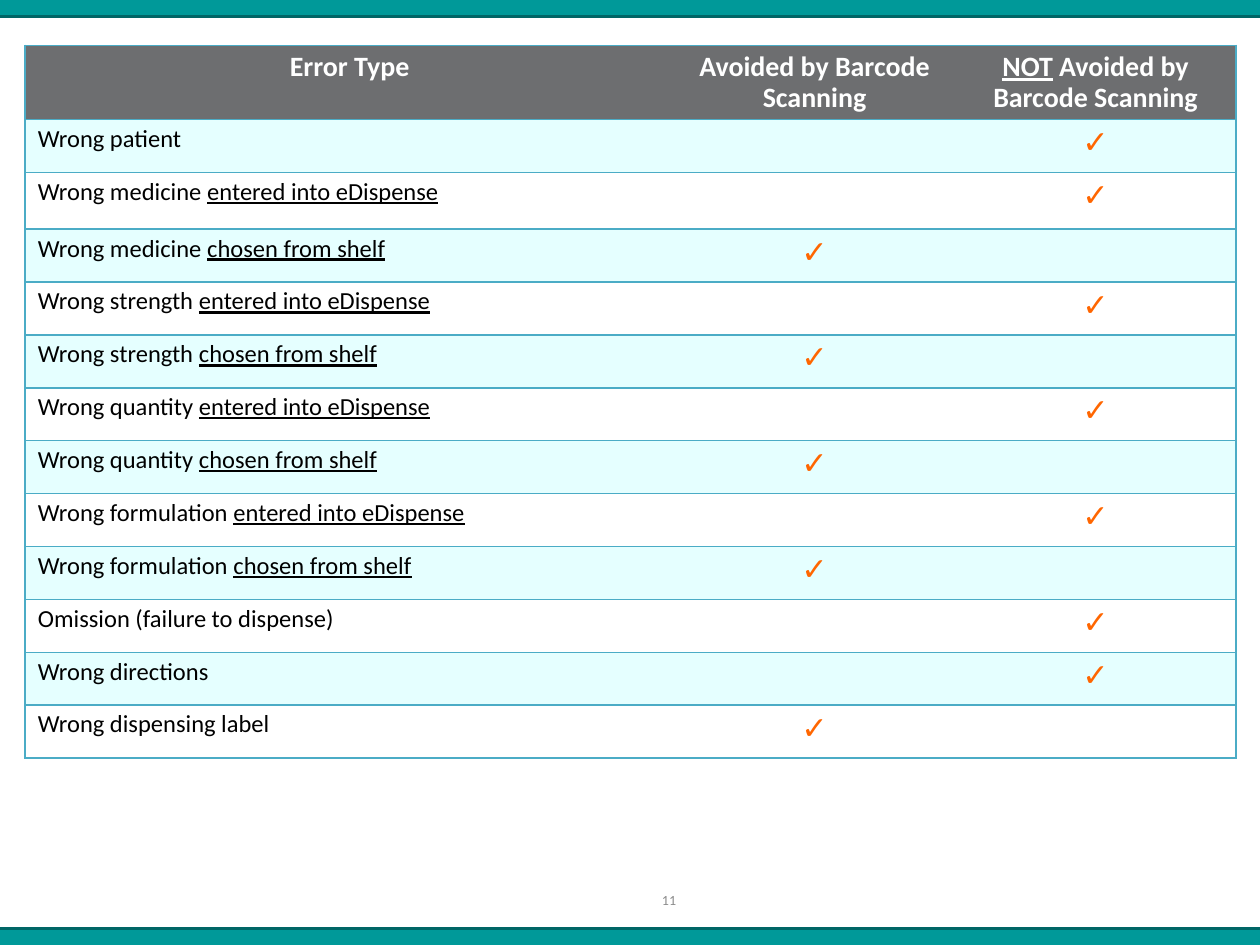
from lxml.etree import SubElement as Sub
from pptx import Presentation as Deck
from pptx.dml.color import RGBColor as RGB
from pptx.enum.shapes import MSO_CONNECTOR as Conn, MSO_SHAPE as Shape
from pptx.enum.text import MSO_ANCHOR as Anchor, PP_ALIGN as Align
from pptx.oxml.ns import qn
from pptx.util import Inches, Pt

TEAL = RGB(0x00, 0x99, 0x99)
DARK = RGB(0x00, 0x66, 0x66)
EDGE = RGB(0x4B, 0xAC, 0xC6)
SLATE = RGB(0x6D, 0x6E, 0x70)
MINT = RGB(0xE5, 0xFF, 0xFF)
WHITE = RGB(0xFF, 0xFF, 0xFF)
BLACK = RGB(0x00, 0x00, 0x00)
ORANGE = RGB(0xFF, 0x66, 0x00)
GREY = RGB(0x8C, 0x8C, 0x8C)

HEAD = {"size": Pt(16), "bold": True}
BODY = {"size": Pt(14), "bold": False}
MARK = {"size": Pt(18), "bold": False}
PAGE = {"size": Pt(8)}

ENTRY = "entered into eDispense"
SHELF = "chosen from shelf"
TITLES = [
    [("Error Type", False)],
    [("Avoided by Barcode Scanning", False)],
    [("NOT", True), (" Avoided by Barcode Scanning", False)],
]
ERRORS = [("Wrong patient", "", 2)]
for kind in ("medicine", "strength", "quantity", "formulation"):
    ERRORS += [(f"Wrong {kind} ", ENTRY, 2), (f"Wrong {kind} ", SHELF, 1)]
ERRORS += [
    ("Omission (failure to dispense)", "", 2),
    ("Wrong directions", "", 2),
    ("Wrong dispensing label", "", 1),
]
WIDTHS = [5.15, 2.23, 2.23]
HEIGHTS = [0.59, 0.42, 0.45] + [0.42] * 10


class Maker:
    face = "Calibri"

    def __init__(self, slide):
        self.slide = slide

    def band(self, top):
        box = self.slide.shapes.add_shape(
            Shape.RECTANGLE, 0, Inches(top), Inches(10), Inches(0.13))
        box.shadow.inherit = False
        box.fill.solid()
        box.fill.fore_color.rgb = TEAL
        box.line.fill.background()

    def rule(self, top):
        line = self.slide.shapes.add_connector(
            Conn.STRAIGHT, 0, Inches(top), Inches(10), Inches(top))
        line.line.color.rgb = DARK
        line.line.width = Pt(2)
        Sub(line._element.spPr, qn("a:effectLst"))

    def text(self, frame, runs, style, color, align, space=0.9):
        para = frame.paragraphs[0]
        para.alignment = align
        para.line_spacing = space
        for words, under in runs:
            run = para.add_run()
            run.text = words
            values = {"name": self.face, "underline": under, **style}
            for key, value in values.items():
                setattr(run.font, key, value)
            run.font.color.rgb = color

    def number(self, words, left, top, width, height):
        box = self.slide.shapes.add_textbox(
            Inches(left), Inches(top), Inches(width), Inches(height))
        frame = box.text_frame
        frame.word_wrap = True
        frame.vertical_anchor = Anchor.MIDDLE
        self.text(frame, [(words, False)], PAGE, GREY, Align.CENTER, 1.0)

    def border(self, cell, sides):
        props = cell._tc.get_or_add_tcPr()
        for side in "LRTB":
            line = Sub(props, qn(f"a:ln{side}"), w=str(Pt(1)))
            if side in sides:
                fill = Sub(line, qn("a:solidFill"))
                Sub(fill, qn("a:srgbClr"), val=str(EDGE))
            else:
                Sub(line, qn("a:noFill"))

    def table(self, left, top, widths, heights):
        grid = self.slide.shapes.add_table(
            len(heights), len(widths), Inches(left), Inches(top),
            Inches(sum(widths)), Inches(sum(heights))).table
        grid.horz_banding = False
        for col, width in zip(grid.columns, widths):
            col.width = Inches(width)
        for row, height in zip(grid.rows, heights):
            row.height = Inches(height)
        ends = {0: "LTB", len(widths) - 1: "RTB"}
        for i, row in enumerate(grid.rows):
            for j, cell in enumerate(row.cells):
                self.border(cell, ends.get(j, "TB"))
                cell.fill.solid()
                cell.fill.fore_color.rgb = (
                    SLATE if i == 0 else MINT if i % 2 else WHITE)
        return grid


def main():
    deck = Deck()
    deck.slide_width, deck.slide_height = Inches(10), Inches(7.5)
    make = Maker(deck.slides.add_slide(deck.slide_layouts[6]))
    for top in (0, 7.37):
        make.band(top)
    for top in (7.37, 0.13):
        make.rule(top)
    make.number("11", 4.45, 6.94, 1.72, 0.4)
    grid = make.table(0.2, 0.36, WIDTHS, HEIGHTS)
    for j, runs in enumerate(TITLES):
        make.text(grid.cell(0, j).text_frame, runs, HEAD, WHITE, Align.CENTER)
    for i, (error, cause, col) in enumerate(ERRORS, 1):
        runs = [(error, False)] + ([(cause, True)] if cause else [])
        make.text(grid.cell(i, 0).text_frame, runs, BODY, BLACK, Align.LEFT)
        make.text(grid.cell(i, col).text_frame, [("✓", False)],
                  MARK, ORANGE, Align.CENTER)
    deck.save("out.pptx")


if __name__ == "__main__":
    main()
